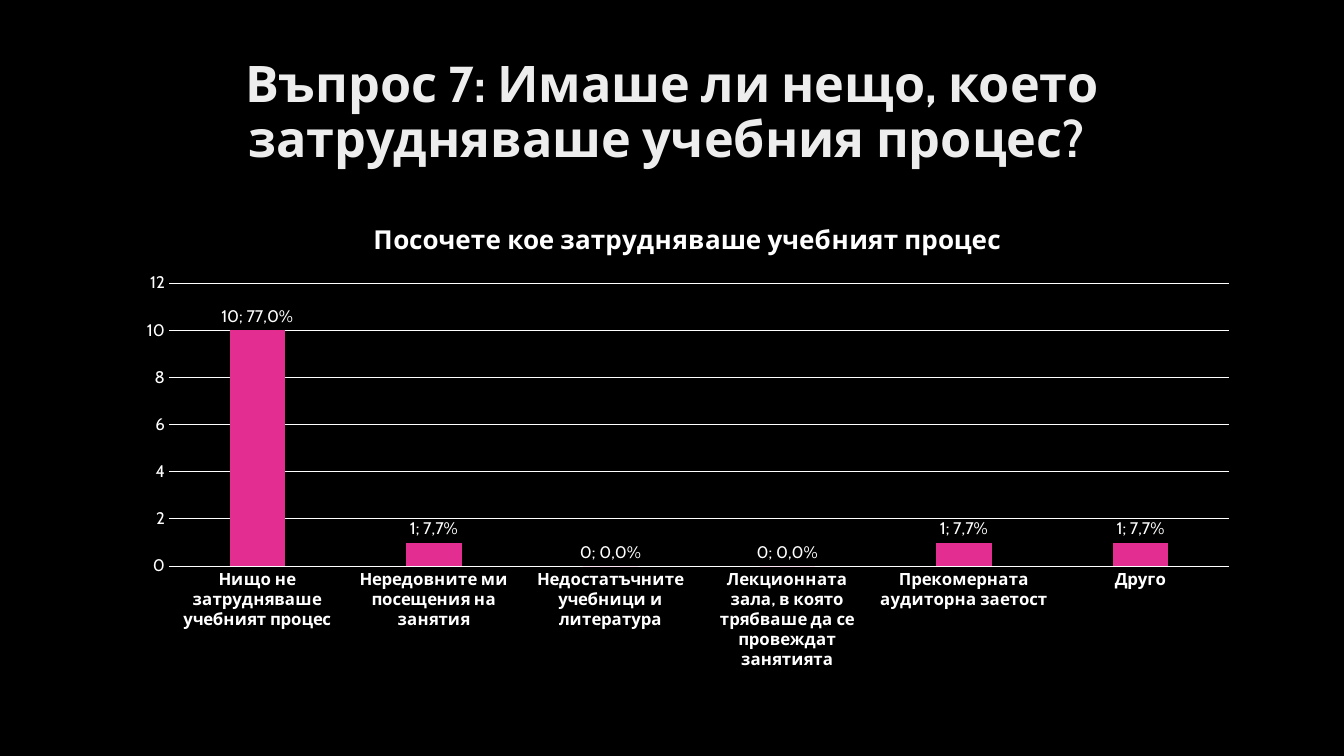
from dataclasses import dataclass

from lxml.etree import SubElement
from pptx import Presentation
from pptx.chart.chart import Chart
from pptx.chart.data import CategoryChartData
from pptx.dml.color import RGBColor
from pptx.enum.chart import XL_CHART_TYPE as ChartType
from pptx.enum.chart import XL_LABEL_POSITION as LabelPosition
from pptx.enum.chart import XL_TICK_MARK as TickMark
from pptx.enum.text import MSO_ANCHOR as Anchor
from pptx.enum.text import MSO_AUTO_SIZE as AutoSize
from pptx.enum.text import PP_ALIGN as Align
from pptx.oxml.ns import qn
from pptx.slide import Slide
from pptx.text.text import Font
from pptx.util import Cm, Pt

COLORS = {"background": "000000", "title": "EDEDED", "text": "FFFFFF", "bar": "E32D91"}
FONT_NAME = "Cabin"
CHART_TITLE = "Посочете кое затрудняваше учебният процес"


@dataclass(frozen=True)
class Answer:
    category: str
    votes: int
    share: str

    @property
    def label(self) -> str:
        return f"{self.votes}; {self.share}"


ANSWERS = [
    Answer("Нищо не затрудняваше учебният процес", 10, "77,0%"),
    Answer("Нередовните ми посещения на занятия", 1, "7,7%"),
    Answer("Недостатъчните учебници и литература", 0, "0,0%"),
    Answer("Лекционната зала, в която трябваше да се провеждат занятията", 0, "0,0%"),
    Answer("Прекомерната аудиторна заетост", 1, "7,7%"),
    Answer("Друго", 1, "7,7%"),
]


def color(name: str) -> RGBColor:
    return RGBColor.from_string(COLORS[name])


def style_font(font: Font, size: float, bold: bool = False, shade: str = "text") -> None:
    font.name = FONT_NAME
    font.size = Pt(size)
    font.bold = bold
    font.color.rgb = color(shade)


def add_title(page: Slide) -> None:
    title = page.shapes.title
    title.left, title.top, title.width, title.height = Cm(2.34), Cm(1.02), Cm(29.21), Cm(3.68)
    frame = title.text_frame
    frame.word_wrap = True
    frame.auto_size = AutoSize.NONE
    frame.vertical_anchor = Anchor.MIDDLE
    para = frame.paragraphs[0]
    para.text = "Въпрос 7: Имаше ли нещо, което затрудняваше учебния процес? "
    para.alignment = Align.CENTER
    para.line_spacing = 0.9
    style_font(para.font, 36, True, "title")


def add_answer_chart(page: Slide) -> Chart:
    data = CategoryChartData()
    data.categories = [answer.category for answer in ANSWERS]
    data.add_series(CHART_TITLE, [answer.votes for answer in ANSWERS])
    chart = page.shapes.add_chart(
        ChartType.COLUMN_CLUSTERED, Cm(3.12), Cm(5.08), Cm(28.42), Cm(12.09), data
    ).chart
    style_font(chart.font, 10)
    chart.has_legend = False
    chart.has_title = True
    chart.chart_title.include_in_layout = False
    para = chart.chart_title.text_frame.paragraphs[0]
    para.text = CHART_TITLE
    style_font(para.font, 18.6, True)
    return chart


def style_axes(chart: Chart) -> None:
    categories, values = chart.category_axis, chart.value_axis
    for axis, bold in ((categories, True), (values, False)):
        axis.major_tick_mark = axis.minor_tick_mark = TickMark.NONE
        style_font(axis.tick_labels.font, 12, bold)
    values.minimum_scale, values.maximum_scale, values.major_unit = 0, 12, 2
    values.has_major_gridlines = True
    values.format.line.fill.background()
    for line in (categories.format.line, values.major_gridlines.format.line):
        line.color.rgb = color("text")
        line.width = Pt(0.75)


def style_bars(chart: Chart) -> None:
    plot = chart.plots[0]
    plot.gap_width = 219
    plot.overlap = -27
    plot.vary_by_categories = False
    series = plot.series[0]
    series.format.fill.solid()
    series.format.fill.fore_color.rgb = color("bar")
    labels = series.data_labels
    labels.show_value = True
    labels.position = LabelPosition.OUTSIDE_END
    style_font(labels.font, 12)
    for index, answer in enumerate(ANSWERS):
        label = series.points[index].data_label
        para = label.text_frame.paragraphs[0]
        span = para.add_run()
        span.text = answer.label
        style_font(span.font, 12)
        label.position = LabelPosition.OUTSIDE_END


def place_plot(chart: Chart, x: float, y: float, width: float, height: float) -> None:
    area = chart.plots[0]._element.getparent()
    for previous in area.findall(qn("c:layout")):
        area.remove(previous)
    layout = SubElement(area, qn("c:layout"))
    area.insert(0, layout)
    manual = SubElement(layout, qn("c:manualLayout"))
    settings = {
        "layoutTarget": "inner", "xMode": "edge", "yMode": "edge",
        "x": x, "y": y, "w": width, "h": height,
    }
    for tag, value in settings.items():
        SubElement(manual, qn(f"c:{tag}")).set("val", str(value))


def main() -> None:
    deck = Presentation()
    deck.slide_width, deck.slide_height = Cm(33.87), Cm(19.05)
    page = deck.slides.add_slide(deck.slide_layouts.get_by_name("Title Only"))
    page.background.fill.solid()
    page.background.fill.fore_color.rgb = color("background")
    add_title(page)
    chart = add_answer_chart(page)
    style_axes(chart)
    style_bars(chart)
    place_plot(chart, 0.04, 0.17, 0.94, 0.59)
    deck.save("out.pptx")


if __name__ == "__main__":
    main()
